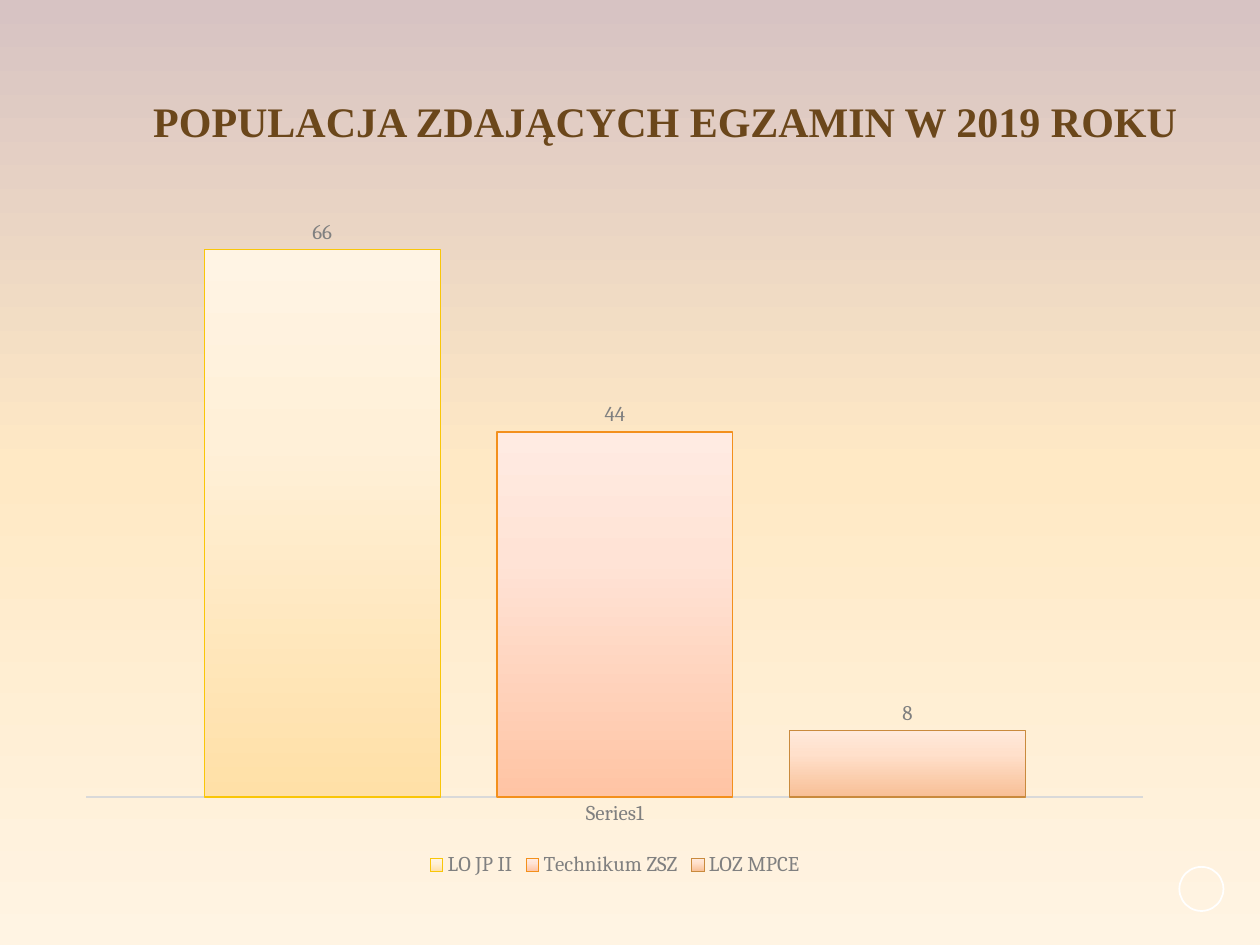
"""Build a slide with a column chart of the 2019 exam population by school."""
import copy

import pptx
import pptx.chart.data
import pptx.dml.color
import pptx.enum.chart
import pptx.enum.shapes
import pptx.enum.text
import pptx.oxml.ns
import pptx.util
from pptx.util import Inches

RGBColor = pptx.dml.color.RGBColor
WHITE = RGBColor(0xFF, 0xFF, 0xFF)
BROWN = RGBColor(0x6B, 0x47, 0x1B)
GRAY = RGBColor(0x80, 0x80, 0x80)
AXIS_GRAY = RGBColor(0xD9, 0xD9, 0xD9)
BACKGROUND = [RGBColor(0xD7, 0xC3, 0xC3), RGBColor(0xFF, 0xE9, 0xC5), RGBColor(0xFF, 0xF4, 0xE3)]
YELLOWS = [RGBColor(0xFF, 0xE0, 0xA7), RGBColor(0xFF, 0xF0, 0xD8), RGBColor(0xFF, 0xF4, 0xE4)]
ORANGES = [RGBColor(0xFF, 0xC4, 0xA4), RGBColor(0xFF, 0xE3, 0xD6), RGBColor(0xFF, 0xEB, 0xE2)]
TANS = [RGBColor(0xF8, 0xBF, 0x96), RGBColor(0xFF, 0xE0, 0xCB), RGBColor(0xFF, 0xE9, 0xDB)]
YELLOW_LINE = RGBColor(0xF9, 0xC6, 0x08)
ORANGE_LINE = RGBColor(0xF3, 0x90, 0x1C)
TAN_LINE = RGBColor(0xC9, 0x8A, 0x3D)

SCHOOLS = [
    ("LO JP II", 66, YELLOWS, YELLOW_LINE),
    ("Technikum ZSZ", 44, ORANGES, ORANGE_LINE),
    ("LOZ MPCE", 8, TANS, TAN_LINE),
]


def set_gradient(fill, owner, colors, middle, angle):
    fill.gradient()
    fill.gradient_angle = angle
    stop_list = next(owner.iter(pptx.oxml.ns.qn("a:gsLst")))
    stop_list.append(copy.deepcopy(stop_list[0]))
    for stop, color, position in zip(fill.gradient_stops, colors, (0, middle, 1)):
        stop.color.rgb = color
        stop.position = position


def style_font(font, size, color, name="Cambria"):
    font.size = pptx.util.Pt(size)
    font.color.rgb = color
    font.name = name


prs = pptx.Presentation()
prs.slide_width = Inches(10)
prs.slide_height = Inches(7.5)
slide = prs.slides.add_slide(prs.slide_layouts[6])
set_gradient(slide.background.fill, slide.element, BACKGROUND, 0.5, 270)

ring = slide.shapes.add_shape(
    pptx.enum.shapes.MSO_SHAPE.OVAL, Inches(9.36), Inches(6.88), Inches(0.35), Inches(0.35))
ring.shadow.inherit = False
ring.fill.background()
ring.line.color.rgb = WHITE
ring.line.width = pptx.util.Pt(1)

title = slide.shapes.add_textbox(Inches(0.78), Inches(0.36), Inches(9), Inches(1.25))
title.text_frame.word_wrap = True
title.text_frame.vertical_anchor = pptx.enum.text.MSO_ANCHOR.MIDDLE
heading = title.text_frame.paragraphs[0]
heading.text = "POPULACJA ZDAJĄCYCH EGZAMIN W 2019 ROKU"
heading.alignment = pptx.enum.text.PP_ALIGN.CENTER
heading.line_spacing = 0.9
style_font(heading.runs[0].font, 24, BROWN, "Times New Roman")
heading.runs[0].font.bold = True

population = pptx.chart.data.CategoryChartData()
population.categories = ["Series1"]
for school, count, colors, outline in SCHOOLS:
    population.add_series(school, [count])
chart = slide.shapes.add_chart(
    pptx.enum.chart.XL_CHART_TYPE.COLUMN_CLUSTERED,
    Inches(0.51), Inches(1.61), Inches(8.74), Inches(5.39), population).chart
style_font(chart.font, 12, GRAY)
chart.has_title = False
chart.has_legend = True
chart.legend.position = pptx.enum.chart.XL_LEGEND_POSITION.BOTTOM
chart.legend.include_in_layout = False
style_font(chart.legend.font, 12, GRAY)

school_axis = chart.category_axis
school_axis.major_tick_mark = pptx.enum.chart.XL_TICK_MARK.NONE
school_axis.format.line.color.rgb = AXIS_GRAY
school_axis.format.line.width = pptx.util.Pt(0.75)
style_font(school_axis.tick_labels.font, 12, GRAY)
count_axis = chart.value_axis
count_axis.visible = False
count_axis.has_major_gridlines = False
count_axis.minimum_scale = 0
count_axis.maximum_scale = 70

columns = chart.plots[0]
columns.gap_width = 100
columns.overlap = -24
columns.vary_by_categories = False
for series, (school, count, colors, outline) in zip(columns.series, SCHOOLS):
    set_gradient(series.format.fill, series._element, colors, 0.65, 90)
    series.format.line.color.rgb = outline
    series.format.line.width = pptx.util.Pt(0.75)
    labels = series.data_labels
    labels.show_value = True
    labels.position = pptx.enum.chart.XL_LABEL_POSITION.OUTSIDE_END
    style_font(labels.font, 12, GRAY)

prs.save("out.pptx")
